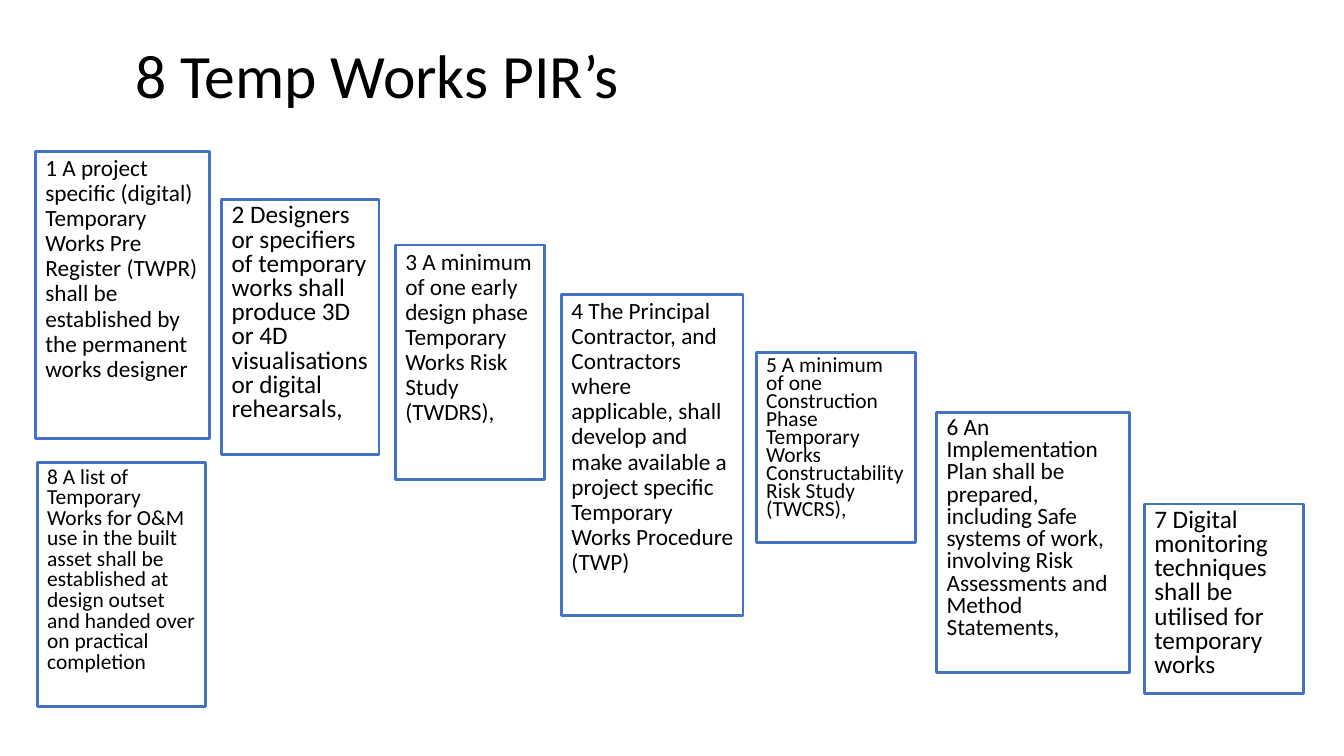
from dataclasses import dataclass
from pptx import Presentation, util as u
from pptx.dml.color import RGBColor
from pptx.enum import shapes, text
from pptx.oxml.ns import qn
from lxml import etree

# Content: (left, top, width, height), type size, line spacing, wording
TITLE = "8 Temp Works PIR’s"
BODIES = [
    ((0.35, 1.5, 1.73, 2.85), 16.6, 0.9,
     "1 A project specific (digital) Temporary Works Pre Register (TWPR) "
     "shall be established by the permanent works designer"),
    ((3.92, 2.43, 1.48, 2.33), 16.6, 0.9,
     "3 A minimum of one early design phase Temporary Works Risk Study (TWDRS),"),
]
STEPS = [
    ((2.2, 1.98, 1.56, 2.53), 18, 0.8,
     "2 Designers or specifiers of temporary works shall produce 3D or 4D "
     "visualisations or digital rehearsals,"),
    ((5.57, 2.92, 1.8, 3.19), 16.6, 0.9,
     "4 The Principal Contractor, and Contractors where applicable, shall "
     "develop and make available a project specific Temporary Works "
     "Procedure (TWP)"),
    ((7.5, 3.5, 1.58, 1.88), 15.3, 0.7,
     "5 A minimum of one Construction Phase Temporary Works "
     "Constructability Risk Study (TWCRS),"),
    ((9.29, 4.09, 1.91, 2.58), 16.6, 0.8,
     "6 An Implementation Plan shall be prepared, including Safe systems of "
     "work, involving Risk Assessments and Method Statements,"),
    ((11.35, 5, 1.58, 1.88), 18, 0.8,
     "7 Digital monitoring techniques shall be utilised for temporary works"),
    ((0.37, 4.59, 1.67, 2.42), 15.3, 0.8,
     "8 A list of Temporary Works for O&M use in the built asset shall be "
     "established at design outset and handed over on practical completion"),
]


@dataclass(frozen=True)
class Theme:
    font: str = "Calibri"
    ink: RGBColor = RGBColor(0, 0, 0)
    edge: RGBColor = RGBColor(0x44, 0x72, 0xC4)
    head: float = 44
    line: float = 2
    gap: float = 10


THEME = Theme()


def place(shape, area):
    shape.left, shape.top, shape.width, shape.height = map(u.Inches, area)


def write(shape, words, size, lead, anchor):
    frame = shape.text_frame
    frame.word_wrap = True
    frame.auto_size = text.MSO_AUTO_SIZE.NONE
    frame.vertical_anchor = anchor
    para = frame.paragraphs[0]
    para.alignment = text.PP_ALIGN.LEFT
    para.line_spacing = lead
    run = para.add_run()
    run.text = words
    run.font.name = THEME.font
    run.font.size = u.Pt(size)
    run.font.color.rgb = THEME.ink
    return para


def fill_box(shape, size, lead, words):
    shape.fill.background()
    shape.line.color.rgb = THEME.edge
    shape.line.width = u.Pt(THEME.line)
    para = write(shape, words, size, lead, text.MSO_ANCHOR.TOP)
    para.space_before = u.Pt(THEME.gap)
    # No bullet or hanging indent
    props = para._p.get_or_add_pPr()
    props.set("marL", "0")
    props.set("indent", "0")
    etree.SubElement(props, qn("a:buNone"))


def main():
    deck = Presentation()
    deck.slide_width, deck.slide_height = u.Inches(13.33), u.Inches(7.5)
    slide = deck.slides.add_slide(deck.slide_layouts.get_by_name("Two Content"))

    # Title
    title = slide.shapes.title
    place(title, (1.24, 0.05, 11.5, 1.45))
    write(title, TITLE, THEME.head, 0.9, text.MSO_ANCHOR.MIDDLE)

    # Boxes in the body placeholders
    for slot, (area, *rest) in enumerate(BODIES, 1):
        body = slide.placeholders[slot]
        place(body, area)
        fill_box(body, *rest)

    # Remaining boxes
    for area, *rest in STEPS:
        box = slide.shapes.add_shape(
            shapes.MSO_SHAPE.RECTANGLE, *map(u.Inches, area))
        box.shadow.inherit = False
        fill_box(box, *rest)

    deck.save("out.pptx")


if __name__ == "__main__":
    main()
